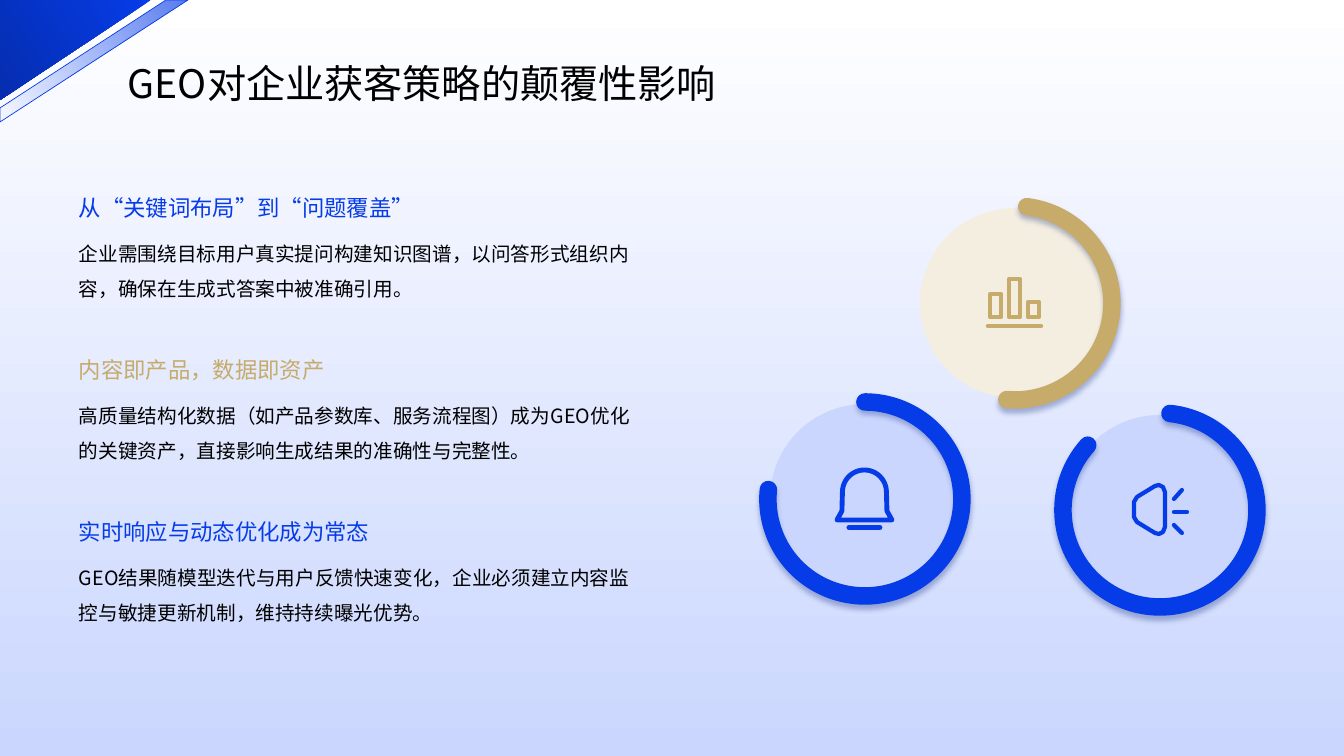
from math import cos, pi, sin

from lxml.etree import SubElement
from pptx import Presentation
from pptx.dml.color import RGBColor
from pptx.enum.shapes import MSO_SHAPE as Preset
from pptx.enum.text import MSO_ANCHOR as Anchor
from pptx.oxml.ns import qn
from pptx.util import Pt

PX = 914400 / 100.8
COLORS = {
    "white": "FFFFFF", "black": "000000", "blue": "063CE8", "navy": "052DAE",
    "sky": "063DED", "pale": "CAD6FE", "gold": "C6AB6A", "cream": "F4EEE1",
    "shade": "031E74",
}


def emu(length):
    return round(length * PX)


def color(name):
    return RGBColor.from_string(COLORS[name])


class SlideBuilder:
    """Draws styled elements on one slide, measured in px."""

    font_name = "Noto Sans CJK SC"

    def __init__(self, page):
        self.shapes = page.shapes

    def plain(self, shape):
        shape.shadow.inherit = False
        shape.fill.background()
        shape.line.fill.background()
        return shape

    def preset(self, kind, left, top, width, height):
        place = [emu(value) for value in (left, top, width, height)]
        return self.plain(self.shapes.add_shape(kind, *place))

    def outline(self, *contours):
        scaled = [[(emu(x), emu(y)) for x, y in points] for points in contours]
        builder = self.shapes.build_freeform(*scaled[0][0])
        for index, (start, *rest) in enumerate(scaled):
            if index:
                builder.move_to(*start)
            builder.add_line_segments(rest, close=len(rest) > 1)
        return self.plain(builder.convert_to_shape())

    def stroke(self, shape, name, points):
        shape.line.color.rgb = color(name)
        shape.line.width = Pt(points)
        line = shape.line._get_or_add_ln()
        line.set("cap", "rnd")
        SubElement(line, qn("a:round"))

    def gradient(self, shape, names, angle, opacities=()):
        shape.fill.gradient()
        shape.fill.gradient_angle = 360 - angle
        for stop, name in zip(shape.fill.gradient_stops, names):
            stop.color.rgb = color(name)
        for stop, opacity in zip(shape._element.spPr.iter(qn("a:gs")), opacities):
            SubElement(stop[0], qn("a:alpha"), val=str(opacity * 1000))

    def ring(self, center, start, end, disc_color, arc_color):
        x, y = center
        disc = self.preset(Preset.OVAL, x - 95, y - 95, 190, 190)
        disc.fill.solid()
        disc.fill.fore_color.rgb = color(disc_color)
        arc = self.preset(Preset.ARC, x - 97, y - 97, 194, 194)
        for index, degrees in enumerate((start, end)):
            arc.adjustments[index] = degrees * 0.6
        self.stroke(arc, arc_color, 12.5)
        effects = arc._element.spPr.find(qn("a:effectLst"))
        shadow = SubElement(effects, qn("a:outerShdw"), blurRad=str(Pt(4)),
                            dist=str(Pt(3)), dir="5400000", rotWithShape="0")
        tint = SubElement(shadow, qn("a:srgbClr"), val=COLORS["shade"])
        SubElement(tint, qn("a:alpha"), val="30000")

    def text(self, words, left, top, width, height, size, name, anchor, spacing):
        box = self.shapes.add_textbox(emu(left), emu(top), emu(width), emu(height))
        frame = box.text_frame
        frame.word_wrap = True
        frame.vertical_anchor = anchor
        frame.margin_left = frame.margin_right = 0
        frame.margin_top = frame.margin_bottom = 0
        para = frame.paragraphs[0]
        para.line_spacing = spacing
        span = para.add_run()
        span.text = words
        span.font.size = Pt(size)
        span.font.color.rgb = color(name)
        span.font.name = self.font_name
        SubElement(span._r.get_or_add_rPr(), qn("a:ea"), typeface=self.font_name)

    def bars_icon(self):
        bars = [[(x, y), (x + 11, y), (x + 11, 317), (x, 317)]
                for x, y in ((990, 294), (1009, 279), (1028, 302))]
        baseline = [(988, 326), (1041, 326)]
        self.stroke(self.outline(*bars, baseline), "gold", 3.2)

    def bell_icon(self):
        angles = [pi + pi * step / 24 for step in range(25)]
        dome = [(864.5 + 22 * cos(a), 492 + 22 * sin(a)) for a in angles]
        body = [(837, 520), (842, 511), *dome, (887, 511), (892, 520)]
        clapper = [(849, 527.5), (880, 527.5)]
        self.stroke(self.outline(body, clapper), "blue", 3.5)

    def horn_icon(self):
        upper = [(1134, 502), (1137, 497), (1155, 486), (1159, 485), (1163, 487), (1165, 492)]
        lower = [(x, 1019 - y) for x, y in reversed(upper)]
        rays = [[(1174, 499), (1182, 490)], [(1174, 512), (1187, 512)],
                [(1174, 525), (1182, 533)]]
        self.stroke(self.outline(upper + lower, *rays), "blue", 3)


def main():
    deck = Presentation()
    deck.slide_width, deck.slide_height = emu(1344), emu(756)
    slide = SlideBuilder(deck.slides.add_slide(deck.slide_layouts[6]))

    backdrop = slide.preset(Preset.RECTANGLE, 0, 0, 1344, 756)
    slide.gradient(backdrop, ("white", "pale"), 90)

    sections = [
        ("从“关键词布局”到“问题覆盖”", "blue",
         "企业需围绕目标用户真实提问构建知识图谱，以问答形式组织内容，确保在生成式答案中被准确引用。"),
        ("内容即产品，数据即资产", "gold",
         "高质量结构化数据（如产品参数库、服务流程图）成为GEO优化的关键资产，直接影响生成结果的准确性与完整性。"),
        ("实时响应与动态优化成为常态", "blue",
         "GEO结果随模型迭代与用户反馈快速变化，企业必须建立内容监控与敏捷更新机制，维持持续曝光优势。"),
    ]
    for index, (heading, name, body) in enumerate(sections):
        top = 184 + 162 * index
        slide.text(heading, 79, top, 552, 37, 16, name, Anchor.BOTTOM, 1.5)
        slide.text(body, 79, top + 46, 552, 97, 14, "black", Anchor.TOP, 1.5)

    slide.ring((1015, 303), 277, 94.8, "cream", "gold")
    slide.bars_icon()
    slide.ring((865, 499), 270, 185.57, "pale", "blue")
    slide.bell_icon()
    slide.ring((1160, 510), 275.93, 221.91, "pale", "blue")
    slide.horn_icon()

    corner = slide.outline([(0, 0), (151, 0), (0, 100)])
    slide.gradient(corner, ("blue", "navy"), 147)
    ribbon = slide.outline([(166, 0), (188, 0), (0, 122), (0, 108)])
    slide.gradient(ribbon, ("blue", "sky"), 147, (68, 0))
    ribbon.line.color.rgb = color("blue")
    ribbon.line.width = Pt(0.5)

    slide.text("GEO对企业获客策略的颠覆性影响", 128, 43, 849, 66, 28, "black", Anchor.MIDDLE, 1.3)
    deck.save("out.pptx")


if __name__ == "__main__":
    main()
